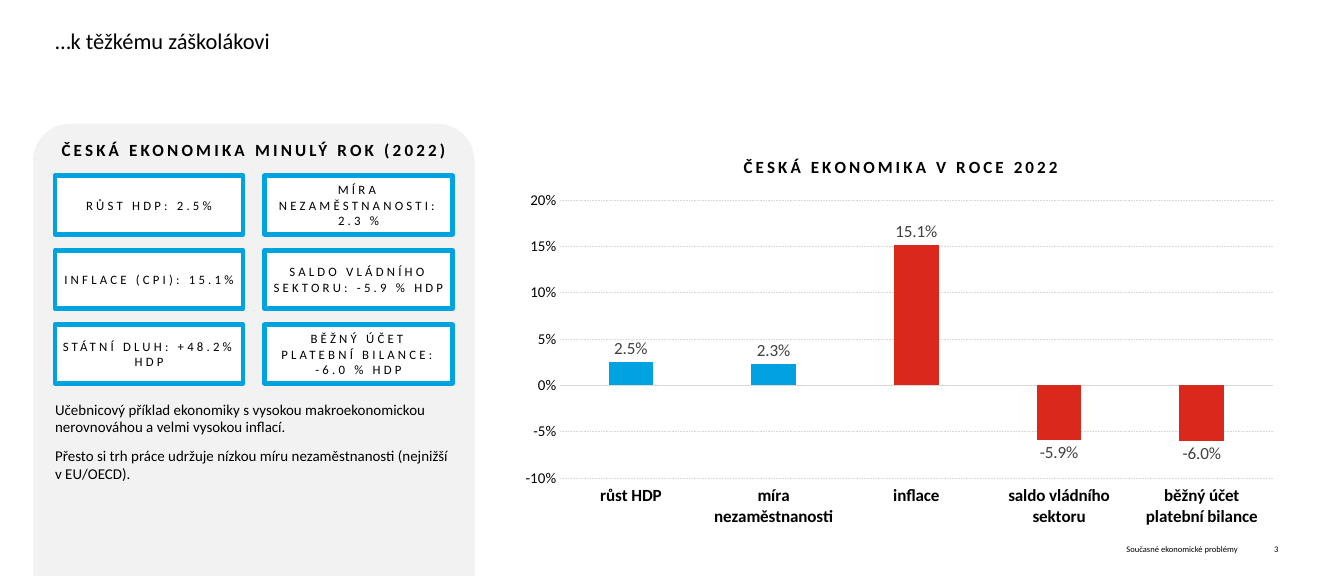
from dataclasses import dataclass

from pptx import Presentation
from pptx.chart.data import CategoryChartData
from pptx.dml.color import RGBColor
from pptx.enum.chart import XL_CHART_TYPE as ChartType, XL_LABEL_POSITION as LabelPos
from pptx.enum.chart import XL_TICK_LABEL_POSITION as TickLabelPos, XL_TICK_MARK as TickMark
from pptx.enum.dml import MSO_LINE as Dash
from pptx.enum.shapes import MSO_SHAPE as Shape
from pptx.enum.text import MSO_ANCHOR as Anchor, PP_ALIGN as Align
from pptx.oxml import parse_xml
from pptx.oxml.ns import nsdecls
from pptx.util import Inches, Pt


@dataclass(frozen=True)
class Theme:
    font: str = "Calibri"
    ink: RGBColor = RGBColor(0, 0, 0)
    paper: RGBColor = RGBColor(0xFF, 0xFF, 0xFF)
    panel: RGBColor = RGBColor(0xF2, 0xF2, 0xF2)
    good: RGBColor = RGBColor(0x00, 0xA3, 0xE0)
    bad: RGBColor = RGBColor(0xDA, 0x29, 0x1C)
    grid: RGBColor = RGBColor(0xD9, 0xD9, 0xD9)
    value: RGBColor = RGBColor(0x40, 0x40, 0x40)
    title: int = 21
    heading: int = 16
    body: int = 14
    indicator: int = 12
    footer: int = 8
    tracking: int = 300


THEME = Theme()
WIDTH, HEIGHT = 17.5, 7.5

INDICATORS = [
    ["RŮST HDP: 2.5%", "MÍRA NEZAMĚSTNANOSTI: 2.3 %"],
    ["INFLACE (CPI): 15.1%", "SALDO VLÁDNÍHO SEKTORU: -5.9 % HDP"],
    ["STÁTNÍ DLUH: +48.2% HDP", "BĚŽNÝ ÚČET PLATEBNÍ BILANCE:\v-6.0 % HDP"],
]
COMMENTS = [
    "Učebnicový příklad ekonomiky s vysokou makroekonomickou nerovnováhou a velmi vysokou inflací.",
    "Přesto si trh práce udržuje nízkou míru nezaměstnanosti (nejnižší v EU/OECD).",
]
RESULTS = [
    ("růst HDP", 0.025, THEME.good),
    ("míra nezaměstnanosti", 0.023, THEME.good),
    ("inflace", 0.151, THEME.bad),
    ("saldo vládního sektoru", -0.059, THEME.bad),
    ("běžný účet platební bilance", -0.06, THEME.bad),
]


def style(font, size, color=THEME.ink, bold=False):
    font.name, font.size, font.bold = THEME.font, Pt(size), bold
    font.color.rgb = color


def track(paragraph):
    for run in paragraph.runs:
        run._r.get_or_add_rPr().set("spc", str(THEME.tracking))


def write(frame, lines, size, align=Align.LEFT, bold=False, tracked=False, inset=0, after=0):
    frame.word_wrap = True
    frame.margin_left = frame.margin_right = Inches(inset)
    frame.margin_top = frame.margin_bottom = Inches(inset)
    for number, line in enumerate(lines):
        paragraph = frame.add_paragraph() if number else frame.paragraphs[0]
        paragraph.text = line
        paragraph.alignment = align
        paragraph.space_after = Pt(after)
        style(paragraph.font, size, bold=bold)
        if tracked:
            track(paragraph)


def add_text(slide, box, lines, size, **options):
    textbox = slide.shapes.add_textbox(*map(Inches, box))
    write(textbox.text_frame, lines, size, **options)


def add_block(slide, kind, box, fill):
    block = slide.shapes.add_shape(kind, *map(Inches, box))
    block.shadow.inherit = False
    block.fill.solid()
    block.fill.fore_color.rgb = fill
    return block


def add_indicators(slide, box):
    left, top, width, height = box
    gap_x, gap_y = 0.28, 0.21
    rows, columns = len(INDICATORS), len(INDICATORS[0])
    cell_w = (width - gap_x * (columns - 1)) / columns
    cell_h = (height - gap_y * (rows - 1)) / rows
    for row, texts in enumerate(INDICATORS):
        for column, text in enumerate(texts):
            place = (left + column * (cell_w + gap_x), top + row * (cell_h + gap_y), cell_w, cell_h)
            indicator = add_block(slide, Shape.RECTANGLE, place, THEME.paper)
            indicator.line.color.rgb = THEME.good
            indicator.line.width = Pt(4.5)
            indicator.text_frame.vertical_anchor = Anchor.MIDDLE
            write(indicator.text_frame, [text], THEME.indicator,
                  align=Align.CENTER, tracked=True, inset=0.1)


def add_summary(slide, box):
    left, top, width, height = box
    panel = add_block(slide, Shape.ROUND_2_SAME_RECTANGLE, box, THEME.panel)
    panel.line.fill.background()
    panel.adjustments[0] = 0.085
    margin = 0.05 * width
    inner_left, inner_width = left + margin, 0.9 * width
    add_text(slide, (inner_left, top + 0.21, inner_width, 0.3),
             ["ČESKÁ EKONOMIKA MINULÝ ROK (2022)"], THEME.heading,
             align=Align.CENTER, bold=True, tracked=True)
    add_indicators(slide, (inner_left, top + 0.68, inner_width, 2.7))
    add_text(slide, (inner_left, top + 3.6, inner_width, 1.2), COMMENTS, THEME.body, after=10)


def fix_plot_area(chart, x, y, w, h):
    plot_area = chart._chartSpace.chart.plotArea
    for old in plot_area.findall("{*}layout"):
        plot_area.remove(old)
    shares = "".join(f'<c:{tag} val="{share}"/>' for tag, share in zip("xywh", (x, y, w, h)))
    plot_area.insert(0, parse_xml(
        f'<c:layout {nsdecls("c")}><c:manualLayout><c:layoutTarget val="inner"/>'
        f'<c:xMode val="edge"/><c:yMode val="edge"/>{shares}</c:manualLayout></c:layout>'))


def style_axes(chart):
    categories, shares = chart.category_axis, chart.value_axis
    for axis in (categories, shares):
        axis.major_tick_mark = axis.minor_tick_mark = TickMark.NONE
    categories.tick_label_position = TickLabelPos.LOW
    categories.format.line.color.rgb = THEME.grid
    categories.format.line.width = Pt(0.75)
    style(categories.tick_labels.font, THEME.heading, bold=True)
    shares.minimum_scale, shares.maximum_scale, shares.major_unit = -0.1, 0.2, 0.05
    shares.tick_labels.number_format = "0%"
    shares.tick_labels.number_format_is_linked = False
    shares.format.line.fill.background()
    style(shares.tick_labels.font, THEME.body)
    gridline = shares.major_gridlines.format.line
    gridline.color.rgb = THEME.grid
    gridline.width = Pt(0.75)
    gridline.dash_style = Dash.ROUND_DOT


def add_results(slide, box):
    data = CategoryChartData(number_format="0.0%")
    data.categories = [name for name, _, _ in RESULTS]
    data.add_series("Series 1", [share for _, share, _ in RESULTS])
    chart = slide.shapes.add_chart(ChartType.COLUMN_CLUSTERED, *map(Inches, box), data).chart
    style(chart.font, THEME.indicator)
    chart.has_legend = False
    chart.has_title = True
    heading = chart.chart_title.text_frame.paragraphs[0]
    heading.text = "ČESKÁ EKONOMIKA V ROCE 2022"
    style(heading.font, THEME.heading, bold=True)
    track(heading)
    fix_plot_area(chart, 0.06, 0.15, 0.92, 0.7)
    style_axes(chart)

    plot = chart.plots[0]
    plot.gap_width, plot.overlap, plot.vary_by_categories = 219, -27, False
    series = plot.series[0]
    series.invert_if_negative = False
    for number, (_, _, color) in enumerate(RESULTS):
        fill = series.points[number].format.fill
        fill.solid()
        fill.fore_color.rgb = color
    labels = series.data_labels
    labels.show_value = True
    labels.position = LabelPos.OUTSIDE_END
    labels.number_format, labels.number_format_is_linked = "0.0%", False
    style(labels.font, THEME.heading, THEME.value)


def add_footer(slide, box):
    left, top, width, height = box
    number_width = 0.13
    add_text(slide, (left, top, width - 0.6, height),
             ["Současné ekonomické problémy"], THEME.footer, align=Align.RIGHT)
    add_text(slide, (left + width - number_width, top, number_width, height), ["3"], THEME.footer)


def main():
    deck = Presentation()
    deck.slide_width, deck.slide_height = Inches(WIDTH), Inches(HEIGHT)
    slide = deck.slides.add_slide(deck.slide_layouts[6])
    add_footer(slide, (9.09, 7.08, 7.63, 0.13))
    add_summary(slide, (0.43, 1.61, 5.75, HEIGHT - 1.61))
    add_text(slide, (0.72, 0.35, 16.06, 0.37), ["…k těžkému záškolákovi"], THEME.title)
    add_results(slide, (6.68, 1.83, 10.1, 5.17))
    deck.save("out.pptx")


if __name__ == "__main__":
    main()
